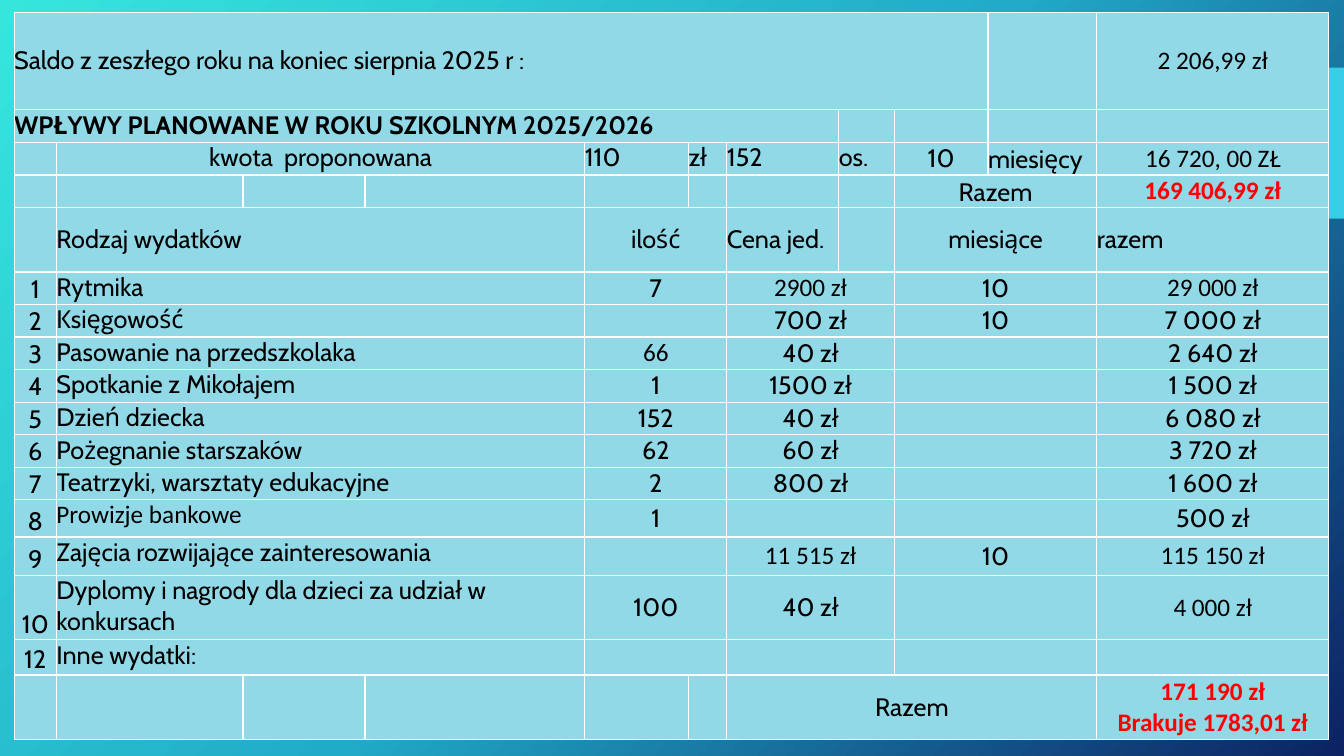
import pptx
import pptx.util
import pptx.oxml
import pptx.dml.color
import pptx.enum.shapes
import pptx.enum.text

Inches = pptx.util.Inches
Pt = pptx.util.Pt
ANCHOR = pptx.enum.text.MSO_ANCHOR
ALIGN = pptx.enum.text.PP_ALIGN
NAMESPACES = ('xmlns:a="http://schemas.openxmlformats.org/drawingml/2006/main" '
              'xmlns:p="http://schemas.openxmlformats.org/presentationml/2006/main"')

COLUMN_WIDTHS = [0.42, 1.85, 1.21, 2.18, 1.03, 0.38, 1.11, 0.55, 0.93, 1.08, 2.3]
TABLE_HEIGHT = 7.22
ROW_COUNT = 17
TALL_ROWS = {0: 0.97, 4: 0.64, 12: 0.37, 13: 0.38, 14: 0.64, 15: 0.35, 16: 0.64}
FIRST_EXPENSE_ROW = 5

EXPENSES = [
    ("1", "Rytmika", "7", "2900 zł", "10", "29 000 zł"),
    ("2", "Księgowość", "", "700 zł", "10", "7 000 zł"),
    ("3", "Pasowanie na przedszkolaka", "66", "40 zł", "", "2 640 zł"),
    ("4", "Spotkanie z Mikołajem", "1", "1500 zł", "", "1 500 zł"),
    ("5", "Dzień dziecka", "152", "40 zł", "", "6 080 zł"),
    ("6", "Pożegnanie starszaków", "62", "60 zł", "", "3 720 zł"),
    ("7", "Teatrzyki, warsztaty edukacyjne", "2", "800 zł", "", "1 600 zł"),
    ("8", "Prowizje bankowe", "1", "", "", "500 zł"),
    ("9", "Zajęcia rozwijające zainteresowania", "", "11 515 zł", "10", "115 150 zł"),
    ("10", "Dyplomy i nagrody dla dzieci za udział w konkursach",
     "100", "40 zł", "", "4 000 zł"),
    ("12", "Inne wydatki:", "", "", "", ""),
]
EXPENSE_COLUMNS = [(0, 1), (1, 3), (4, 2), (6, 2), (8, 2), (10, 1)]
CALIBRI_ENTRIES = {"2900 zł", "29 000 zł", "66", "Prowizje bankowe",
                   "11 515 zł", "115 150 zł", "4 000 zł"}


def rgb(color):
    return pptx.dml.color.RGBColor.from_string(color)


def write_text(frame, text, font="Cabin", size=18, color="000000", bold=False, align=ALIGN.LEFT):
    """Write each line of text as its own paragraph."""
    for index, line in enumerate(text.split("\n")):
        paragraph = frame.add_paragraph() if index else frame.paragraphs[0]
        paragraph.alignment = align
        run = paragraph.add_run()
        run.text = line
        run.font.name = font
        run.font.size = Pt(size)
        run.font.bold = bold
        run.font.color.rgb = rgb(color)


class BudgetSlide:
    cell_color = "92D9E8"
    border_color = "FFFFFF"
    accent_color = "39CDE7"
    background_stops = [(0, "36E6DD"), (50, "21ABC8"), (100, "0C2263")]
    background_angle = 42

    def __init__(self, presentation):
        self.slide = presentation.slides.add_slide(presentation.slide_layouts[6])

    def background(self):
        stops = "".join(f'<a:gs pos="{position * 1000}"><a:srgbClr val="{color}"/></a:gs>'
                        for position, color in self.background_stops)
        element = pptx.oxml.parse_xml(
            f'<p:bg {NAMESPACES}><p:bgPr><a:gradFill rotWithShape="1"><a:gsLst>{stops}</a:gsLst>'
            f'<a:lin ang="{self.background_angle * 60000}" scaled="0"/></a:gradFill>'
            '<a:effectLst/></p:bgPr></p:bg>')
        self.slide.element.cSld.insert(0, element)

    def rectangle(self, left, top, width, height):
        shape = self.slide.shapes.add_shape(
            pptx.enum.shapes.MSO_SHAPE.RECTANGLE,
            Inches(left), Inches(top), Inches(width), Inches(height))
        shape.shadow.inherit = False
        shape.fill.solid()
        shape.fill.fore_color.rgb = rgb(self.accent_color)
        shape.line.fill.background()

    def table(self, left, top):
        """Add the empty table, filled and bordered."""
        self.grid = self.slide.shapes.add_table(
            ROW_COUNT, len(COLUMN_WIDTHS), Inches(left), Inches(top),
            Inches(sum(COLUMN_WIDTHS)), Inches(TABLE_HEIGHT)).table
        self.grid.first_row = False
        self.grid.horz_banding = False
        for column, width in zip(self.grid.columns, COLUMN_WIDTHS):
            column.width = Inches(width)
        plain_height = (TABLE_HEIGHT - sum(TALL_ROWS.values())) / (ROW_COUNT - len(TALL_ROWS))
        for index, row in enumerate(self.grid.rows):
            row.height = Inches(TALL_ROWS.get(index, plain_height))
        for cell in self.grid.iter_cells():
            self.style_cell(cell)

    def style_cell(self, cell):
        cell.margin_left = cell.margin_right = cell.margin_top = cell.margin_bottom = 0
        cell.fill.solid()
        cell.fill.fore_color.rgb = rgb(self.cell_color)
        properties = cell._tc.get_or_add_tcPr()
        for index, side in enumerate(("lnL", "lnR", "lnT", "lnB")):
            properties.insert(index, pptx.oxml.parse_xml(
                f'<a:{side} {NAMESPACES} w="{Pt(1)}"><a:solidFill>'
                f'<a:srgbClr val="{self.border_color}"/></a:solidFill></a:{side}>'))

    def entry(self, row, column, text, span=1, anchor=ANCHOR.TOP, **text_format):
        cell = self.grid.cell(row, column)
        if span > 1:
            cell.merge(self.grid.cell(row, column + span - 1))
        cell.vertical_anchor = anchor
        if text:
            write_text(cell.text_frame, text, **text_format)

    def expense(self, row, values):
        for (column, span), text in zip(EXPENSE_COLUMNS, values):
            anchor = {0: ANCHOR.BOTTOM, 1: ANCHOR.TOP}.get(column, ANCHOR.MIDDLE)
            self.entry(row, column, text, span, anchor,
                       font="Calibri" if text in CALIBRI_ENTRIES else "Cabin",
                       align=ALIGN.LEFT if column == 1 else ALIGN.CENTER)


def main():
    presentation = pptx.Presentation()
    presentation.slide_width = Inches(13.33)
    presentation.slide_height = Inches(7.5)

    budget = BudgetSlide(presentation)
    budget.background()
    budget.rectangle(11.58, 0.67, 1.75, 1.5)
    budget.table(0.14, 0.12)

    middle = {"anchor": ANCHOR.MIDDLE}
    centered = {"anchor": ANCHOR.MIDDLE, "align": ALIGN.CENTER}
    amount = {**centered, "font": "Calibri"}
    red_total = {**amount, "color": "FF0000", "bold": True}

    budget.entry(0, 0, "Saldo z zeszłego roku na koniec sierpnia 2025 r :", span=9, **middle)
    budget.entry(0, 10, "2 206,99 zł", **amount)
    budget.entry(1, 0, "WPŁYWY PLANOWANE W ROKU SZKOLNYM 2025/2026", span=7, bold=True)

    budget.entry(2, 1, "kwota  proponowana", span=3, align=ALIGN.CENTER)
    for column, text in enumerate(("110", "zł", "152", "os."), start=4):
        budget.entry(2, column, text)
    budget.entry(2, 8, "10", **centered)
    budget.entry(2, 9, "miesięcy", anchor=ANCHOR.BOTTOM)
    budget.entry(2, 10, "16 720, 00 ZŁ", **amount)
    budget.entry(3, 8, "Razem", span=2, anchor=ANCHOR.BOTTOM, align=ALIGN.CENTER)
    budget.entry(3, 10, "169 406,99 zł", **red_total)

    budget.entry(4, 1, "Rodzaj wydatków", span=3, **middle)
    budget.entry(4, 4, "ilość", span=2, **centered)
    budget.entry(4, 6, "Cena jed.", **middle)
    budget.entry(4, 8, "miesiące", span=2, **centered)
    budget.entry(4, 10, "razem", **middle)

    for row, values in enumerate(EXPENSES, start=FIRST_EXPENSE_ROW):
        budget.expense(row, values)

    budget.entry(16, 6, "Razem", span=4, **centered)
    budget.entry(16, 10, "171 190 zł\nBrakuje 1783,01 zł", **red_total)
    presentation.save("out.pptx")


if __name__ == "__main__":
    main()
